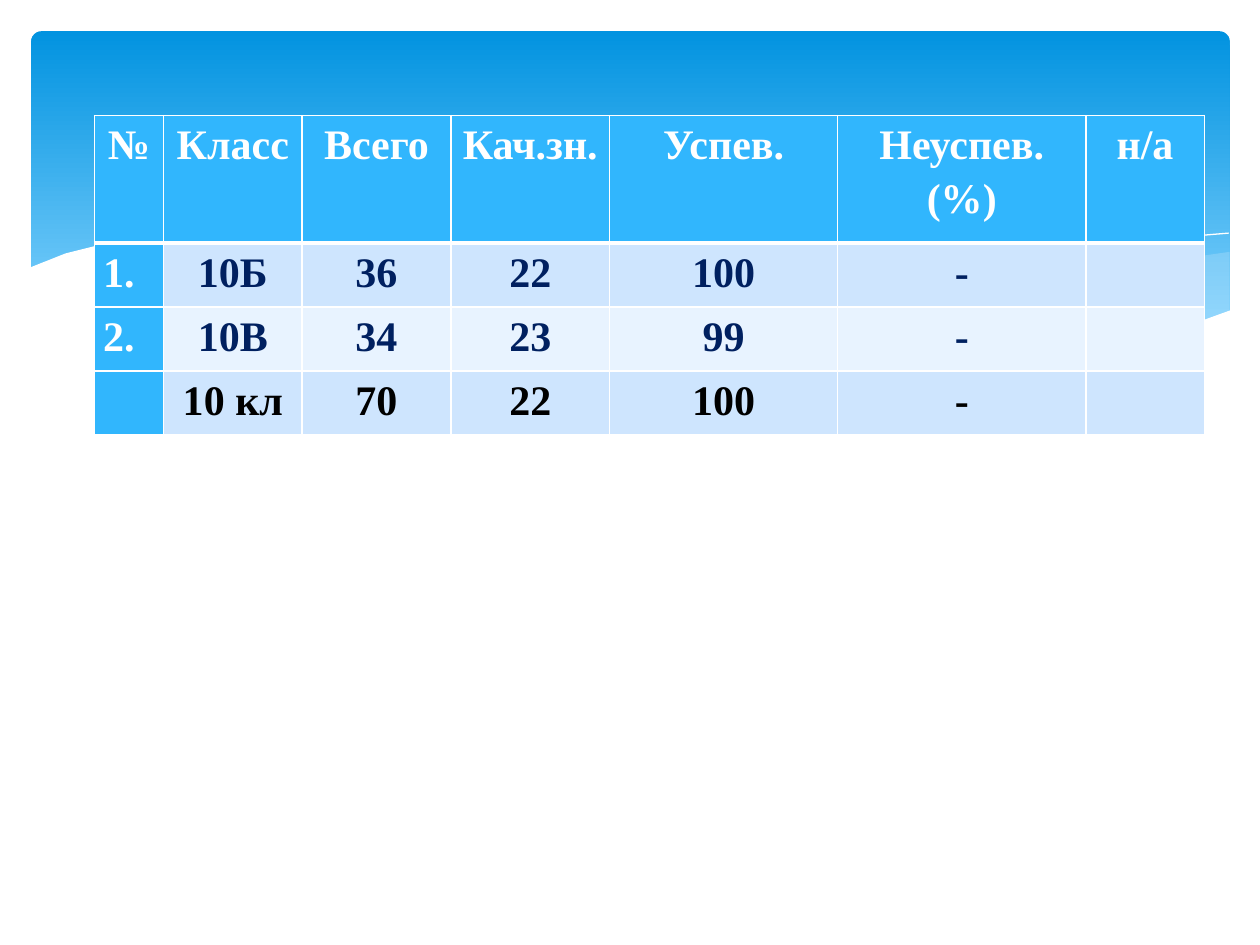
from dataclasses import dataclass
from typing import Optional

from lxml import etree
from pptx import Presentation
from pptx.dml.color import RGBColor
from pptx.enum.shapes import MSO_SHAPE
from pptx.enum.text import PP_ALIGN
from pptx.oxml.ns import qn
from pptx.util import Cm, Pt

ROUNDED = MSO_SHAPE.ROUNDED_RECTANGLE
LEFT, CENTER = PP_ALIGN.LEFT, PP_ALIGN.CENTER

COLORS = {
    "white": "FFFFFF",
    "banner_top": "0293E0",
    "banner_bottom": "83D3FE",
    "swoosh": "C6E7FC",
    "header": "31B6FD",
    "band_dark": "CEE5FE",
    "band_light": "E8F3FF",
    "navy": "002060",
    "black": "000000",
}
TEXT_FORMAT = {"name": "Times New Roman", "size": Pt(24), "bold": True}
CELL_FORMAT = {"margin_left": Cm(0.18), "margin_right": Cm(0.18),
               "margin_top": Cm(0), "margin_bottom": Cm(0)}


@dataclass
class Wave:
    """A wave over the banner; points are in centimetres."""
    points: list[tuple[float, float]]
    fill: Optional[str] = None
    opacity: int = 100


@dataclass
class Row:
    texts: list[str]
    height: float
    fill: str
    color: str
    bottom_border: float = 1


WAVES = [
    # Right swoosh
    Wave([(24.77, 5.08), (24.08, 5.18), (23.01, 5.41), (21.87, 5.66),
          (20.45, 6.02), (18.52, 6.43), (16.79, 6.73), (17.55, 6.83),
          (18.59, 6.96), (19.53, 7.04), (20.68, 7.06), (21.69, 7.01),
          (22.58, 6.91), (23.39, 6.73), (24.1, 6.53), (24.79, 6.27),
          (24.79, 5.08)], "swoosh", 29),
    # Middle swoosh
    Wave([(22.68, 6.93), (21.26, 6.73), (19.69, 6.45), (17.93, 6.1),
          (15.98, 5.64), (14.83, 5.36), (13.74, 5.16), (12.75, 4.98),
          (11.81, 4.85), (10.67, 4.75), (9.65, 4.7), (8.74, 4.72),
          (7.95, 4.78), (7.26, 4.85), (8.2, 4.98), (9.19, 5.16),
          (10.26, 5.36), (11.4, 5.64), (12.47, 5.89), (14.38, 6.3),
          (15.7, 6.55), (16.89, 6.76), (18.01, 6.91), (19, 7.01),
          (20.22, 7.06), (21.29, 7.06), (22.02, 7.01)], "swoosh", 40),
    # Falling and rising hairlines
    Wave([(7.85, 4.95), (8.33, 4.88), (8.97, 4.8), (9.83, 4.75), (11, 4.75),
          (12.42, 4.83), (13.54, 4.93), (14.78, 5.08), (16.15, 5.28),
          (17.65, 5.56), (19.3, 5.92), (21.11, 6.38), (23.04, 6.91)]),
    Wave([(15.57, 6.53), (16.59, 6.25), (17.65, 5.97), (19, 5.66),
          (20.47, 5.33), (22, 5.05), (23.11, 4.88), (24.16, 4.75),
          (24.77, 4.7)]),
    # White wave that cuts off the banner's lower edge
    Wave([(24.82, 6.25), (24.13, 6.5), (23.37, 6.73), (22.53, 6.88),
          (21.59, 6.99), (20.55, 7.04), (19.33, 6.99), (17.98, 6.86),
          (16.46, 6.65), (14.71, 6.35), (12.78, 5.92), (11.35, 5.59),
          (9.93, 5.26), (8.64, 5), (7.42, 4.83), (6.35, 4.72), (5.36, 4.67),
          (4.09, 4.67), (3.02, 4.75), (2.16, 4.9), (1.32, 5.11),
          (0.64, 5.38), (0.58, 5.41), (0.58, 8.36), (24.82, 8.36)], "white"),
]

COLUMN_WIDTHS = [1.4, 2.79, 3, 3.2, 4.6, 5, 2.39]
ROWS = [
    Row(["№", "Класс", "Всего", "Кач.зн.", "Успев.", "Неуспев.\n(%)", "н/а"],
        2.57, "header", "white", 3),
    Row(["1.", "10Б", "36", "22", "100", "-", ""], 1.29, "band_dark", "navy"),
    Row(["2.", "10В", "34", "23", "99", "-", ""], 1.29, "band_light", "navy"),
    Row(["", "10 кл", "70", "22", "100", "-", ""], 1.29, "band_dark", "black"),
]


def rgb(key: str) -> RGBColor:
    return RGBColor.from_string(COLORS[key])


def paint(fill, key: str) -> None:
    fill.solid()
    fill.fore_color.rgb = rgb(key)


def draw_banner(shapes) -> None:
    banner = shapes.add_shape(ROUNDED, Cm(0.63), Cm(0.63), Cm(24.16), Cm(6.86))
    banner.adjustments[0] = 0.03
    banner.shadow.inherit = False
    banner.line.fill.background()
    banner.fill.gradient()
    banner.fill.gradient_angle = 270
    stops = [(0, "banner_top"), (0.9, "banner_bottom")]
    for stop, (position, key) in zip(banner.fill.gradient_stops, stops):
        stop.position = position
        stop.color.rgb = rgb(key)


def draw_wave(shapes, wave: Wave) -> None:
    start, *rest = [(Cm(x), Cm(y)) for x, y in wave.points]
    builder = shapes.build_freeform(*start)
    builder.add_line_segments(rest, close=wave.fill is not None)
    curve = builder.convert_to_shape()
    curve.shadow.inherit = False
    if wave.fill is None:
        curve.fill.background()
        paint(curve.line.fill, "white")
        curve.line.width = Pt(0)
        return
    curve.line.fill.background()
    paint(curve.fill, wave.fill)
    if wave.opacity < 100:
        color = curve.fill._xPr.find(".//" + qn("a:srgbClr"))
        etree.SubElement(color, qn("a:alpha"), val=str(wave.opacity * 1000))


def set_borders(cell, widths: dict[str, float]) -> None:
    properties = cell._tc.get_or_add_tcPr()
    for index, (side, width) in enumerate(widths.items()):
        border = etree.Element(qn(f"a:{side}"), w=str(Pt(width)))
        solid = etree.SubElement(border, qn("a:solidFill"))
        etree.SubElement(solid, qn("a:srgbClr"), val=COLORS["white"])
        properties.insert(index, border)


def fill_cell(cell, text: str, color: str, align: PP_ALIGN) -> None:
    for name, value in CELL_FORMAT.items():
        setattr(cell, name, value)
    cell.text_frame.text = text
    for paragraph in cell.text_frame.paragraphs:
        paragraph.alignment = align
        paragraph.line_spacing = 1.15
        for run in paragraph.runs:
            for name, value in TEXT_FORMAT.items():
                setattr(run.font, name, value)
            run.font.color.rgb = rgb(color)


def draw_results(shapes) -> None:
    results = shapes.add_table(
        len(ROWS), len(COLUMN_WIDTHS), Cm(1.9), Cm(2.33),
        Cm(sum(COLUMN_WIDTHS)), Cm(sum(row.height for row in ROWS))).table
    for column, width in zip(results.columns, COLUMN_WIDTHS):
        column.width = Cm(width)
    top_border = 1
    for r, row in enumerate(ROWS):
        results.rows[r].height = Cm(row.height)
        for c, text in enumerate(row.texts):
            cell = results.cell(r, c)
            is_number = r > 0 and c == 0
            fill_cell(cell, text, "white" if is_number else row.color,
                      LEFT if is_number else CENTER)
            paint(cell.fill, "header" if is_number else row.fill)
            set_borders(cell, {"lnL": 1, "lnR": 1, "lnT": top_border,
                               "lnB": row.bottom_border})
        top_border = row.bottom_border


def main() -> None:
    presentation = Presentation()
    presentation.slide_width, presentation.slide_height = Cm(25.4), Cm(19.05)
    slide = presentation.slides.add_slide(presentation.slide_layouts[6])
    paint(slide.background.fill, "white")
    draw_banner(slide.shapes)
    for wave in WAVES:
        draw_wave(slide.shapes, wave)
    draw_results(slide.shapes)
    presentation.save("out.pptx")


if __name__ == "__main__":
    main()
